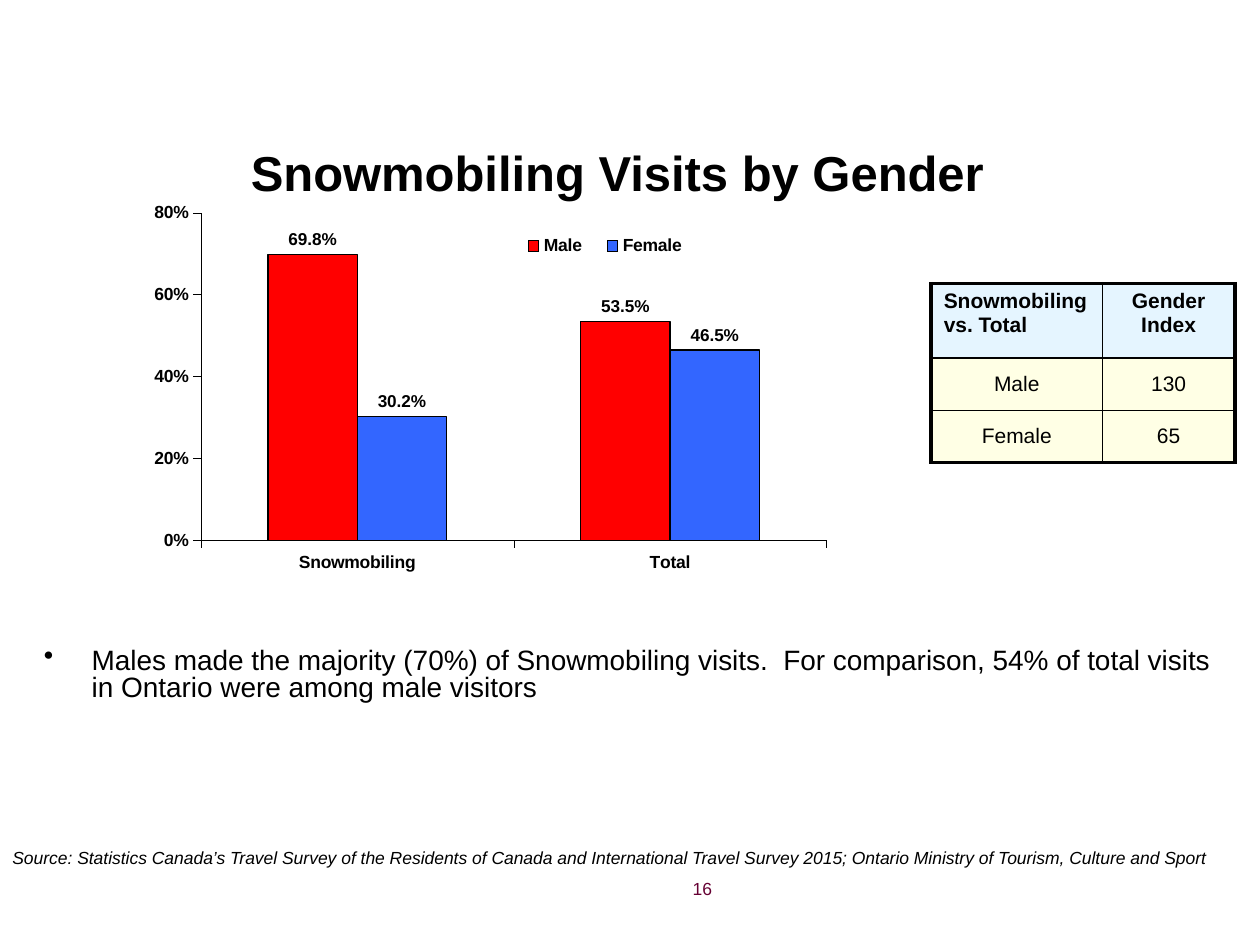
"""Build the slide on snowmobiling visits by gender."""
from lxml import etree
from pptx import Presentation
from pptx.chart.data import CategoryChartData
from pptx.dml.color import RGBColor
from pptx.enum import chart as charts, text
from pptx.oxml import parse_xml
from pptx.oxml.ns import nsdecls, qn
from pptx.util import Inches, Pt

BLACK = RGBColor(0x00, 0x00, 0x00)
MAROON = RGBColor(0x66, 0x00, 0x33)
RED = RGBColor(0xFF, 0x00, 0x00)
BLUE = RGBColor(0x33, 0x66, 0xFF)
PALE_BLUE = RGBColor(0xCC, 0xEC, 0xFF)
PALE_YELLOW = RGBColor(0xFF, 0xFF, 0xCC)
LEFT, CENTER, RIGHT = text.PP_ALIGN.LEFT, text.PP_ALIGN.CENTER, text.PP_ALIGN.RIGHT


def style_font(font, size, color=BLACK, bold=False, italic=False):
    """Set the typeface, size, colour and emphasis of a font."""
    font.name, font.size, font.bold, font.italic = "Arial", Pt(size), bold, italic
    font.color.rgb = color


def write(frame, words, size, align=LEFT, **style):
    """Write one styled run into the first paragraph and return the paragraph."""
    frame.word_wrap = True
    paragraph = frame.paragraphs[0]
    paragraph.alignment = align
    run = paragraph.add_run()
    run.text = words
    style_font(run.font, size, **style)
    return paragraph


def add_title(slide, words):
    """Place and fill the title placeholder."""
    title = slide.shapes.title
    title.left, title.top = Inches(0.4), Inches(1.08)
    title.width, title.height = Inches(9), Inches(0.75)
    title.text_frame.vertical_anchor = text.MSO_ANCHOR.TOP
    write(title.text_frame, words, 28, CENTER, bold=True)


def add_text(slide, box, words, size, align=LEFT, **style):
    """Add a text box and return its paragraph."""
    shape = slide.shapes.add_textbox(*map(Inches, box))
    return write(shape.text_frame, words, size, align, **style)


def add_bullet(paragraph, indent):
    """Give a paragraph a bullet with a hanging indent."""
    properties = paragraph._p.get_or_add_pPr()
    properties.set("marL", str(Inches(indent)))
    properties.set("indent", str(-Inches(indent)))
    etree.SubElement(properties, qn("a:buChar"), char="•")
    paragraph.line_spacing = 0.8


def set_borders(cell, widths):
    """Draw the left, right, top and bottom borders of a cell."""
    properties = cell._tc.get_or_add_tcPr()
    for side, width in zip("LRTB", widths):
        properties.append(parse_xml(
            f'<a:ln{side} {nsdecls("a")} w="{Pt(width)}"><a:solidFill>'
            f'<a:srgbClr val="{BLACK}"/></a:solidFill></a:ln{side}>'))


def fill_half(cell, color):
    """Fill a cell with a half-transparent colour."""
    cell.fill.solid()
    cell.fill.fore_color.rgb = color
    swatch = cell._tc.tcPr.find(qn("a:solidFill")).find(qn("a:srgbClr"))
    etree.SubElement(swatch, qn("a:alpha"), val="50000")


def add_index_table(slide, rows):
    """Add the gender index table with a heavy outer frame."""
    widths, heights = (1.36, 1.05), (0.59, 0.42, 0.41)
    frame = slide.shapes.add_table(
        len(rows), len(widths), Inches(7.39), Inches(2.25),
        Inches(sum(widths)), Inches(sum(heights)))
    table = frame.table
    for column, width in zip(table.columns, widths):
        column.width = Inches(width)
    for row, height in zip(table.rows, heights):
        row.height = Inches(height)
    for i, row in enumerate(rows):
        for j, words in enumerate(row):
            cell, header = table.cell(i, j), i == 0
            edges = (j == 0, j == len(widths) - 1, header, i == len(rows) - 1)
            set_borders(cell, [2.25 if outer else 1 for outer in edges])
            fill_half(cell, PALE_BLUE if header else PALE_YELLOW)
            if not header:
                cell.vertical_anchor = text.MSO_ANCHOR.MIDDLE
                cell.margin_left = cell.margin_right = 0
                cell.margin_top = cell.margin_bottom = 0
            align = LEFT if header and j == 0 else CENTER
            write(cell.text_frame, words, 12, align, bold=header)


def manual_layout(x, y, width, height, inner=False):
    """Return a chart layout given in fractions of the chart."""
    target = '<c:layoutTarget val="inner"/>' if inner else ""
    return parse_xml(
        f'<c:layout {nsdecls("c")}><c:manualLayout>{target}'
        '<c:xMode val="edge"/><c:yMode val="edge"/>'
        f'<c:x val="{x}"/><c:y val="{y}"/><c:w val="{width}"/><c:h val="{height}"/>'
        '</c:manualLayout></c:layout>')


def style_axis(axis):
    """Give an axis thin lines, outward ticks and bold labels."""
    axis.has_major_gridlines = False
    axis.major_tick_mark = charts.XL_TICK_MARK.OUTSIDE
    axis.format.line.color.rgb = BLACK
    axis.format.line.width = Pt(0.19)
    style_font(axis.tick_labels.font, 10, bold=True)


def style_series(series, color):
    """Colour a series and label its columns."""
    series.format.fill.solid()
    series.format.fill.fore_color.rgb = color
    series.format.line.color.rgb = BLACK
    series.format.line.width = Pt(0.75)
    labels = series.data_labels
    labels.show_value = True
    labels.number_format, labels.number_format_is_linked = "0.0%", False
    labels.position = charts.XL_LABEL_POSITION.OUTSIDE_END
    style_font(labels.font, 9.8, bold=True)


def add_gender_chart(slide):
    """Add the column chart of visits by gender."""
    data = CategoryChartData(number_format="0.0%")
    data.categories = ["Snowmobiling", "Total"]
    data.add_series("Male", (0.698, 0.535))
    data.add_series("Female", (0.302, 0.465))
    chart = slide.shapes.add_chart(
        charts.XL_CHART_TYPE.COLUMN_CLUSTERED, Inches(0.83), Inches(1.5),
        Inches(7.64), Inches(3.77), data).chart
    chart.has_title = False
    style_font(chart.font, 15.7, bold=True)
    plot = chart.plots[0]
    plot.gap_width, plot.overlap, plot.vary_by_categories = 150, 0, False
    for series, color in zip(plot.series, (RED, BLUE)):
        style_series(series, color)
    style_axis(chart.category_axis)
    values = chart.value_axis
    style_axis(values)
    values.minimum_scale, values.maximum_scale, values.major_unit = 0, 0.8, 0.2
    values.tick_labels.number_format = "0%"
    values.tick_labels.number_format_is_linked = False
    area = chart._chartSpace.chart.plotArea
    for layout in area.findall(qn("c:layout")):
        area.remove(layout)
    area.insert(0, manual_layout(0.1, 0.05, 0.65, 0.69, inner=True))
    chart.has_legend = True
    legend = chart.legend
    legend.position = charts.XL_LEGEND_POSITION.RIGHT
    legend.include_in_layout = False
    style_font(legend.font, 10, bold=True)
    element = legend._element
    for layout in element.findall(qn("c:layout")):
        element.remove(layout)
    element.find(qn("c:legendPos")).addnext(manual_layout(0.42, 0.09, 0.2, 0.06))


def main():
    """Build and save the slide."""
    presentation = Presentation()
    presentation.slide_width, presentation.slide_height = Inches(10), Inches(7.5)
    slide = presentation.slides.add_slide(presentation.slide_layouts[5])
    add_title(slide, "Snowmobiling Visits by Gender")
    add_index_table(slide, [("Snowmobiling vs. Total", "Gender Index"),
                            ("Male", "130"), ("Female", "65")])
    finding = add_text(
        slide, (0.25, 5.1, 9.5, 1.67),
        "Males made the majority (70%) of Snowmobiling visits.  For comparison, "
        "54% of total visits in Ontario were among male visitors", 16)
    add_bullet(finding, 0.38)
    add_text(slide, (5.08, 6.92, 0.67, 0.35), "16", 10, RIGHT, color=MAROON)
    add_gender_chart(slide)
    add_text(
        slide, (0, 6.67, 9.8, 0.27),
        "Source: Statistics Canada’s Travel Survey of the Residents of Canada and "
        "International Travel Survey 2015; Ontario Ministry of Tourism, Culture and Sport",
        10, italic=True)
    presentation.save("out.pptx")


if __name__ == "__main__":
    main()
